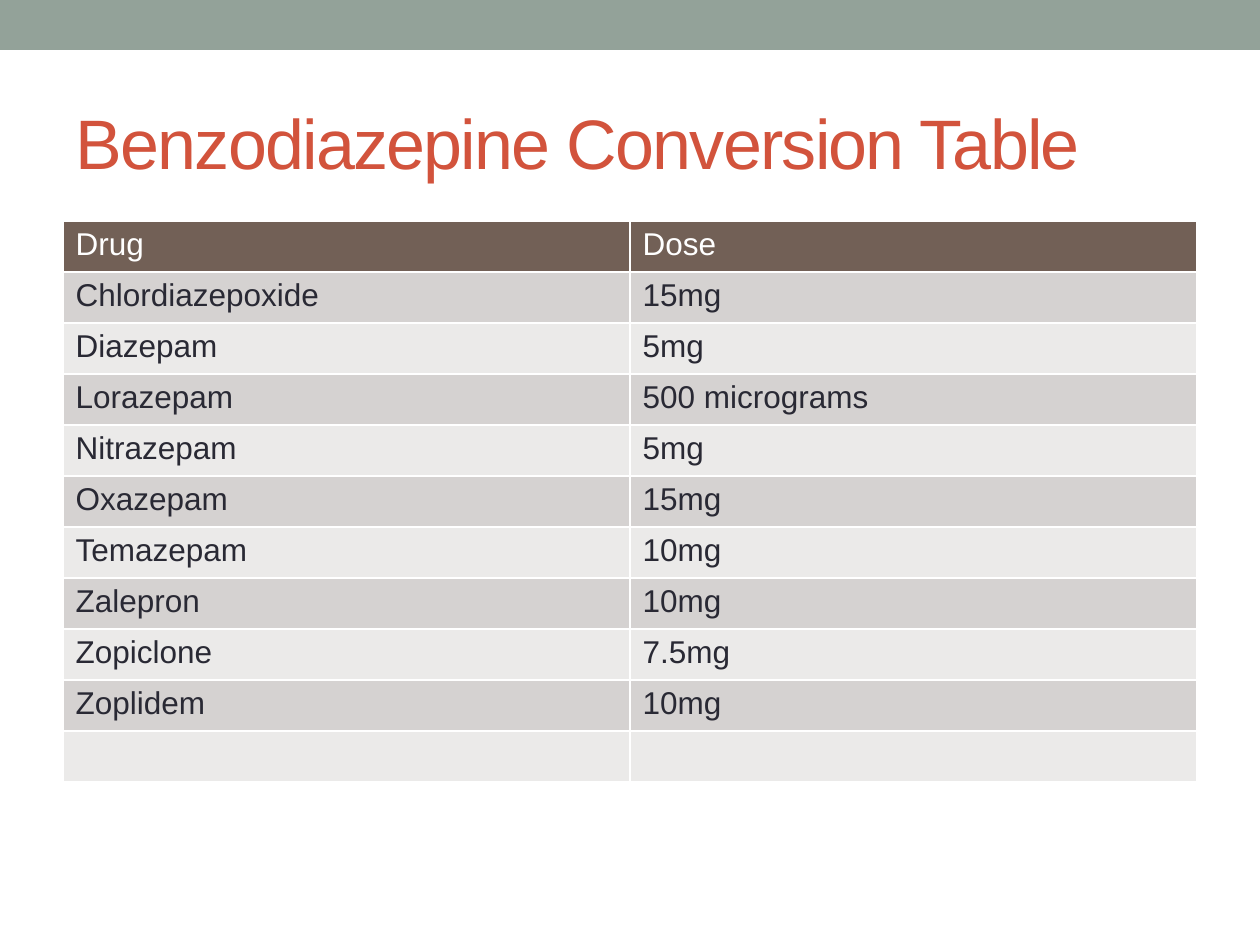
"""Build the benzodiazepine conversion table slide."""
from dataclasses import dataclass

from lxml.etree import SubElement
from pptx import Presentation
from pptx.dml.color import RGBColor
from pptx.enum.shapes import MSO_SHAPE as Shape
from pptx.enum.text import MSO_ANCHOR as Anchor, MSO_AUTO_SIZE as AutoSize, PP_ALIGN as Align
from pptx.oxml.ns import qn
from pptx.util import Emu, Pt

EMU_PER_PX = 914400 / 126
SAGE = RGBColor(0x93, 0xA2, 0x99)
RUST = RGBColor(0xD2, 0x53, 0x3C)
BROWN = RGBColor(0x72, 0x60, 0x56)
INK = RGBColor(0x29, 0x29, 0x34)
WHITE = RGBColor(0xFF, 0xFF, 0xFF)
BANDS = (RGBColor(0xD5, 0xD2, 0xD1), RGBColor(0xEB, 0xEA, 0xE9))
TITLE_FONT = {"name": "Arial", "size": Pt(40), "bold": False}
CELL_FONT = {"name": "Arial", "size": Pt(18), "bold": False}
TITLE_FRAME = {"word_wrap": True, "auto_size": AutoSize.NONE, "vertical_anchor": Anchor.MIDDLE}


@dataclass(frozen=True)
class Box:
    """Position and size in px."""
    left: int
    top: int
    width: int
    height: int

    def emu(self) -> tuple[Emu, ...]:
        """Return the four lengths in EMU."""
        return tuple(map(px, (self.left, self.top, self.width, self.height)))


@dataclass(frozen=True)
class Dose:
    """One row of the conversion table."""
    drug: str
    amount: str


HEADER = Dose("Drug", "Dose")
DOSES = (
    Dose("Chlordiazepoxide", "15mg"),
    Dose("Diazepam", "5mg"),
    Dose("Lorazepam", "500 micrograms"),
    Dose("Nitrazepam", "5mg"),
    Dose("Oxazepam", "15mg"),
    Dose("Temazepam", "10mg"),
    Dose("Zalepron", "10mg"),
    Dose("Zopiclone", "7.5mg"),
    Dose("Zoplidem", "10mg"),
    Dose("", ""),
)
PAGE = Box(0, 0, 1260, 945)
BAR = Box(0, 0, 1260, 50)
TITLE = Box(63, 73, 1134, 136)
ROW_HEIGHT = 51
TABLE = Box(63, 221, 1134, ROW_HEIGHT * (len(DOSES) + 1))


def px(length: int) -> Emu:
    """Turn px into EMU."""
    return Emu(round(length * EMU_PER_PX))


def apply_format(target, values: dict) -> None:
    """Set each attribute named in the format values."""
    for name, value in values.items():
        setattr(target, name, value)


def draw_bar(slide, box: Box) -> None:
    """Draw the band across the top of the slide."""
    bar = slide.shapes.add_shape(Shape.RECTANGLE, *box.emu())
    bar.shadow.inherit = False
    bar.fill.solid()
    bar.fill.fore_color.rgb = SAGE
    bar.line.fill.background()


def draw_title(slide, box: Box, text: str) -> None:
    """Place and format the title placeholder."""
    title = slide.shapes.title
    apply_format(title, dict(zip(("left", "top", "width", "height"), box.emu())))
    apply_format(title.text_frame, TITLE_FRAME)
    paragraph = title.text_frame.paragraphs[0]
    paragraph.alignment = Align.LEFT
    run = paragraph.add_run()
    run.text = text
    apply_format(run.font, TITLE_FONT)
    run.font.color.rgb = RUST
    run.font._element.set("spc", "-100")


def draw_borders(cell) -> None:
    """Give all four sides of a cell a thin white line."""
    properties = cell._tc.get_or_add_tcPr()
    for side in ("lnL", "lnR", "lnT", "lnB"):
        line = SubElement(properties, qn(f"a:{side}"), w=str(Pt(1)))
        SubElement(SubElement(line, qn("a:solidFill")), qn("a:srgbClr"), val=str(WHITE))


def fill_cell(cell, text: str, background: RGBColor, color: RGBColor) -> None:
    """Write and format one table cell."""
    draw_borders(cell)
    cell.fill.solid()
    cell.fill.fore_color.rgb = background
    cell.text = text
    font = cell.text_frame.paragraphs[0].font
    apply_format(font, CELL_FONT)
    font.color.rgb = color
    for run in cell.text_frame.paragraphs[0].runs:
        apply_format(run.font, CELL_FONT)
        run.font.color.rgb = color


def draw_table(slide, box: Box, rows: tuple[Dose, ...]) -> None:
    """Draw the header and the banded dose rows."""
    table = slide.shapes.add_table(len(rows), 2, *box.emu()).table
    for index, dose in enumerate(rows):
        table.rows[index].height = px(ROW_HEIGHT)
        background, color = (BANDS[(index - 1) % 2], INK) if index else (BROWN, WHITE)
        for column, text in enumerate((dose.drug, dose.amount)):
            fill_cell(table.cell(index, column), text, background, color)


def main() -> None:
    """Build and save the presentation."""
    presentation = Presentation()
    presentation.slide_width, presentation.slide_height = PAGE.emu()[2:]
    slide = presentation.slides.add_slide(presentation.slide_layouts.get_by_name("Title Only"))
    draw_bar(slide, BAR)
    draw_title(slide, TITLE, "Benzodiazepine Conversion Table")
    draw_table(slide, TABLE, (HEADER, *DOSES))
    presentation.save("out.pptx")


if __name__ == "__main__":
    main()
